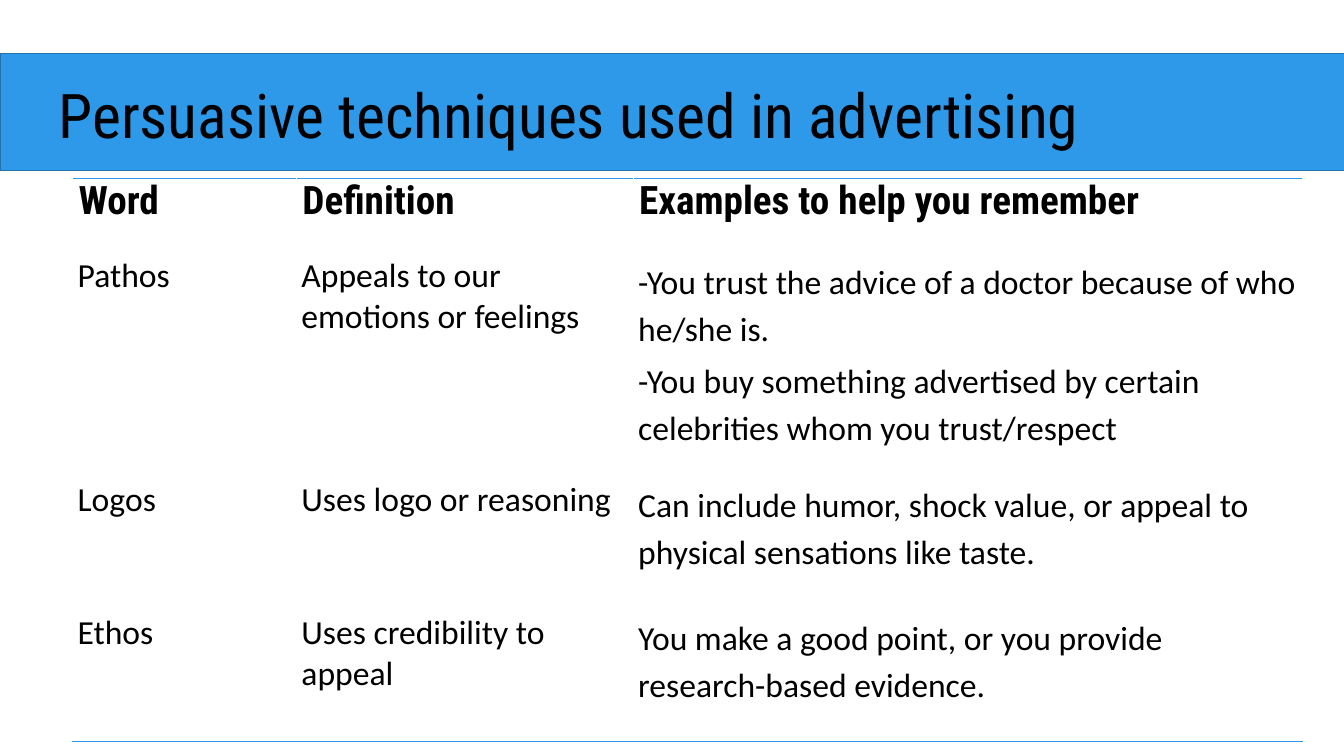
from lxml.etree import SubElement
from pptx import Presentation
from pptx.dml.color import RGBColor
from pptx.enum.shapes import MSO_SHAPE
from pptx.enum.text import MSO_ANCHOR, PP_ALIGN
from pptx.oxml import parse_xml
from pptx.oxml.ns import nsdecls, qn
from pptx.util import Pt

EMU_PER_PX = 9144
BLUE = RGBColor(0x2E, 0x99, 0xE9)
DARK_BLUE = RGBColor(0x22, 0x71, 0xAC)
BLACK = RGBColor(0, 0, 0)
HEADING_FONT = "Roboto Condensed"
BODY_FONT = "Calibri"

COLUMN_WIDTHS = [222, 334, 664]
ROW_HEIGHTS = [77, 222, 132, 128]
ROWS = [
    ["Word", "Definition", "Examples to help you remember"],
    ["Pathos", "Appeals to our emotions or feelings",
     "-You trust the advice of a doctor because of who he/she is.\n"
     "-You buy something advertised by certain celebrities whom you trust/respect"],
    ["Logos", "Uses logo or reasoning",
     "Can include humor, shock value, or appeal to physical sensations like taste."],
    ["Ethos", "Uses credibility to appeal",
     "You make a good point, or you provide research-based evidence."],
]
EXAMPLE_SPACING = [0, 4, 7, 7]


def px(*lengths):
    return [length * EMU_PER_PX for length in lengths]


def add_border(cell, side):
    properties = cell._tc.get_or_add_tcPr()
    line = parse_xml(f'<a:{side} {nsdecls("a")} w="12700"/>')
    fill = SubElement(line, qn("a:solidFill"))
    SubElement(fill, qn("a:srgbClr"), val=str(BLUE))
    properties.insert(0, line)


presentation = Presentation()
presentation.slide_width, presentation.slide_height = px(1333, 750)
slide = presentation.slides.add_slide(presentation.slide_layouts[5])

band = slide.shapes.add_shape(MSO_SHAPE.RECTANGLE, *px(0, 53, 1339, 116))
band.shadow.inherit = False
band.fill.solid()
band.fill.fore_color.rgb = BLUE
band.line.color.rgb = DARK_BLUE
band.line.width = Pt(1)
slide.shapes._spTree.insert(2, band._element)

title = slide.shapes.title
title.left, title.top, title.width, title.height = px(48, 66, 1269, 125)
title_frame = title.text_frame
title_frame.text = "Persuasive techniques used in advertising"
title_frame.word_wrap = True
title_frame.vertical_anchor = MSO_ANCHOR.TOP
(title_frame.margin_left, title_frame.margin_top,
 title_frame.margin_right, title_frame.margin_bottom) = px(10, 10, 10, 10)
title_paragraph = title_frame.paragraphs[0]
title_paragraph.alignment = PP_ALIGN.LEFT
title_font = title_paragraph.runs[0].font
title_font.name = HEADING_FONT
title_font.size = Pt(44)
title_font.color.rgb = BLACK

table = slide.shapes.add_table(
    len(ROWS), len(COLUMN_WIDTHS),
    *px(72, 177, sum(COLUMN_WIDTHS), sum(ROW_HEIGHTS))).table
table.first_row = False
table.horz_banding = False
for column, width in zip(table.columns, px(*COLUMN_WIDTHS)):
    column.width = width
for row, height in zip(table.rows, px(*ROW_HEIGHTS)):
    row.height = height

for row_index, texts in enumerate(ROWS):
    is_header = row_index == 0
    for column_index, text in enumerate(texts):
        cell = table.cell(row_index, column_index)
        cell.fill.background()
        cell.vertical_anchor = MSO_ANCHOR.TOP
        side_margin = 6 if is_header else 5
        (cell.margin_left, cell.margin_top,
         cell.margin_right, cell.margin_bottom) = px(side_margin, 0, side_margin, 0)
        cell.text_frame.text = text
        for paragraph in cell.text_frame.paragraphs:
            if column_index == 2 and not is_header:
                paragraph.line_spacing = 1.15
                paragraph.space_before = Pt(EXAMPLE_SPACING[row_index])
            font = paragraph.runs[0].font
            font.name = HEADING_FONT if is_header else BODY_FONT
            font.size = Pt(28 if is_header else 24)
            font.bold = is_header
            font.color.rgb = BLACK
        if is_header:
            add_border(cell, "lnT")
        elif row_index == len(ROWS) - 1:
            add_border(cell, "lnB")

presentation.save("out.pptx")
